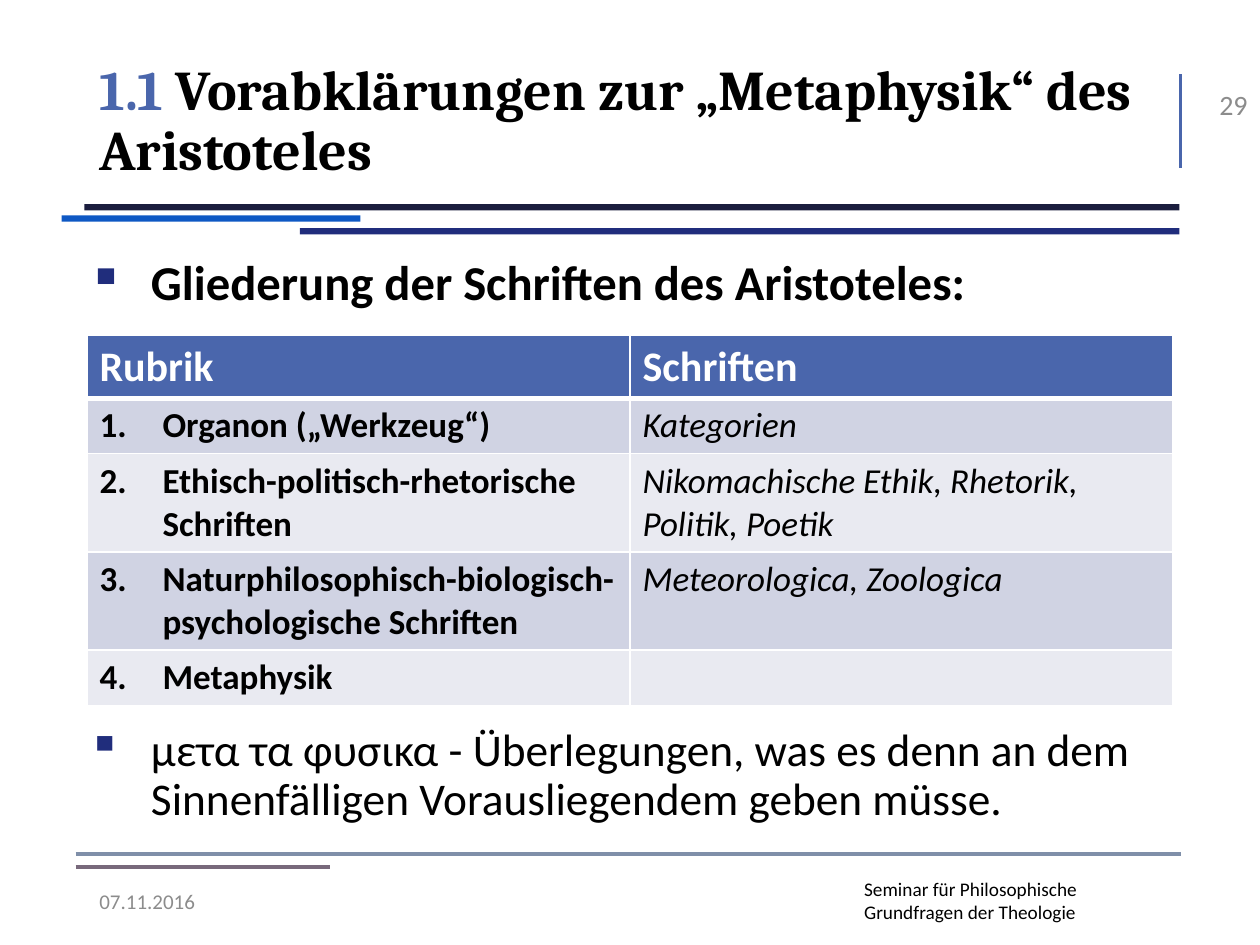
from lxml import etree
from pptx import Presentation
from pptx.dml.color import RGBColor
from pptx.enum.shapes import MSO_CONNECTOR, MSO_SHAPE
from pptx.enum.text import MSO_ANCHOR, PP_ALIGN
from pptx.oxml.ns import qn
from pptx.util import Inches, Pt

RECT = MSO_SHAPE.RECTANGLE
LINE = MSO_CONNECTOR.STRAIGHT
TOP, MID = MSO_ANCHOR.TOP, MSO_ANCHOR.MIDDLE
LEFT, RIGHT = PP_ALIGN.LEFT, PP_ALIGN.RIGHT

BLACK = RGBColor(0x00, 0x00, 0x00)
WHITE = RGBColor(0xFF, 0xFF, 0xFF)
GREY = RGBColor(0x8C, 0x8C, 0x8C)
BLUE = RGBColor(0x4A, 0x66, 0xAC)
NIGHT = RGBColor(0x1B, 0x1E, 0x3E)
BRIGHT = RGBColor(0x0E, 0x58, 0xC4)
NAVY = RGBColor(0x20, 0x2D, 0x7C)
STEEL = RGBColor(0x7F, 0x8F, 0xA9)
MAUVE = RGBColor(0x78, 0x69, 0x7B)
DARK = RGBColor(0xD0, 0xD3, 0xE3)
LIGHT = RGBColor(0xE9, 0xEA, 0xF1)

deck = Presentation()
deck.slide_width, deck.slide_height = Inches(10), Inches(7.5)
slide = deck.slides.add_slide(deck.slide_layouts[6])
shapes = slide.shapes
UNIT = deck.slide_width / 100


def grid(*cells):
    return [round(n * UNIT) for n in cells]


def write(frame, text, size=20, color=BLACK, face="Calibri", bold=False,
          italic=False, anchor=TOP, align=LEFT, space=1.0, mark=None, start=None):
    frame.word_wrap = True
    frame.vertical_anchor = anchor
    para = frame.paragraphs[0]
    if mark or start:
        props = para._p.get_or_add_pPr()
        props.set("marL", str(Inches(0.5)))
        props.set("indent", str(Inches(-0.5)))
        if mark:
            tint = etree.SubElement(props, qn("a:buClr"))
            etree.SubElement(tint, qn("a:srgbClr"), val=str(NAVY))
            etree.SubElement(props, qn("a:buChar"), char=mark)
        else:
            etree.SubElement(props, qn("a:buAutoNum"), type="arabicPeriod",
                             startAt=str(start))
    para.alignment = align
    para.line_spacing = space
    run = para.add_run()
    run.text = text
    font = run.font
    font.name, font.size = face, Pt(size)
    font.bold, font.italic = bold, italic
    font.color.rgb = color


for place, color in (
    ((6.7, 16.2, 86.9, 0.5), NIGHT),
    ((4.9, 17.1, 23.7, 0.5), BRIGHT),
    ((23.8, 18.1, 69.8, 0.5), NAVY),
):
    bar = shapes.add_shape(RECT, *grid(*place))
    bar.shadow.inherit = False
    bar.fill.solid()
    bar.fill.fore_color.rgb = color
    bar.line.fill.background()

for ends, color, width in (
    ((93.7, 5.9, 93.7, 13.3), BLUE, 2),
    ((6, 67.8, 93.7, 67.8), STEEL, 2.5),
    ((6, 68.8, 26.2, 68.8), MAUVE, 2.25),
):
    rule = shapes.add_connector(LINE, *grid(*ends))
    rule.line.color.rgb = color
    rule.line.width = Pt(width)
    etree.SubElement(rule._element.spPr, qn("a:effectLst"))

title = shapes.add_textbox(*grid(6.9, 4, 86.2, 11.4)).text_frame
head = dict(size=32, face="Cambria", bold=True, anchor=MID, space=0.9)
write(title, "1.1", color=BLUE, **head)
write(title, " Vorabklärungen zur „Metaphysik“ des Aristoteles", **head)

for place, text, style in (
    ((6, 20, 87.6, 5.5), "Gliederung der Schriften des Aristoteles:",
     dict(size=27.8, bold=True, space=0.9, mark="▪")),
    ((6, 57.2, 87.6, 9.3),
     "μετα τα φυσικα - Überlegungen, was es denn an dem "
     "Sinnenfälligen Vorausliegendem geben müsse.",
     dict(size=25.9, space=0.9, mark="▪")),
    ((67.6, 69.1, 19.5, 4.7),
     "Seminar für Philosophische Grundfragen der Theologie", dict(size=11)),
    ((6.9, 69.5, 9.9, 4), "07.11.2016",
     dict(size=12, color=GREY, anchor=MID)),
    ((93.7, 5.5, 6.3, 5.6), "29",
     dict(size=16, color=GREY, anchor=MID, align=RIGHT)),
):
    write(shapes.add_textbox(*grid(*place)).text_frame, text, **style)

ROWS = (
    ("Rubrik", "Schriften", 4.9),
    ("Organon („Werkzeug“)", "Kategorien", 4.4),
    ("Ethisch-politisch-rhetorische Schriften",
     "Nikomachische Ethik, Rhetorik, Politik, Poetik", 7.8),
    ("Naturphilosophisch-biologisch-psychologische Schriften",
     "Meteorologica, Zoologica", 7.8),
    ("Metaphysik", "", 4.4),
)
tall = sum(row[2] for row in ROWS)
table = shapes.add_table(len(ROWS), 2, *grid(6.9, 26.6, 86.2, tall)).table
for r, (*texts, height) in enumerate(ROWS):
    table.rows[r].height = grid(height)[0]
    for c, text in enumerate(texts):
        cell = table.cell(r, c)
        props = cell._tc.get_or_add_tcPr()
        for side in "LRTB":
            thick = (r, side) in ((0, "B"), (1, "T"))
            edge = etree.SubElement(props, qn("a:ln" + side),
                                    w=str(Pt(3 if thick else 1)))
            fill = etree.SubElement(edge, qn("a:solidFill"))
            etree.SubElement(fill, qn("a:srgbClr"), val=str(WHITE))
        cell.fill.solid()
        cell.fill.fore_color.rgb = BLUE if r == 0 else (LIGHT, DARK)[r % 2]
        if r == 0:
            write(cell.text_frame, text, size=24, color=WHITE, bold=True)
        elif c == 0:
            write(cell.text_frame, text, bold=True, start=r)
        elif text:
            write(cell.text_frame, text, italic=True)

deck.save("out.pptx")
